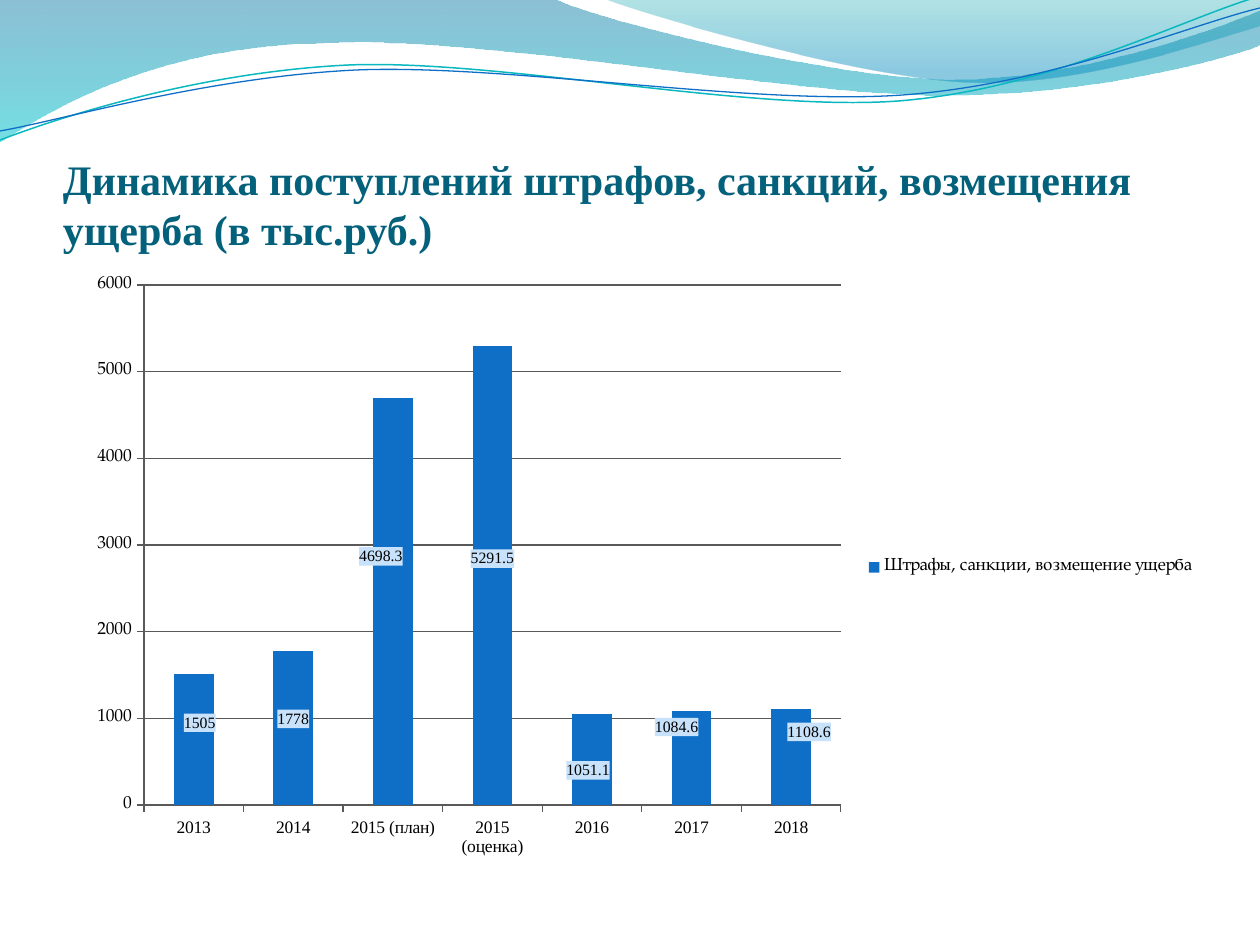
from copy import deepcopy
from typing import NamedTuple

from pptx import Presentation
from pptx.chart.data import CategoryChartData
from pptx.dml.color import RGBColor
from pptx.enum.chart import XL_CHART_TYPE as ChartType, XL_LEGEND_POSITION as LegendPosition
from pptx.enum.text import MSO_ANCHOR as Anchor
from pptx.oxml import parse_xml
from pptx.oxml.ns import nsdecls, qn
from pptx.util import Emu, Pt

PX = 914400 / 126
SERIF = "Times New Roman"
BODY = "TeX Gyre Pagella"
BLUE = "0F6FC6"
LABEL_FILL = "C7E2FA"
AXIS_GRAY = "595959"
CHART_BOX = (74, 265, 1134, 605)
PLOT_BOX = (70, 20, 697, 520)


class Stop(NamedTuple):
    position: float
    color: str
    opacity: int


class Wave(NamedTuple):
    start: tuple
    segments: list
    stops: tuple = ()
    color: str = ""
    width: float = 0


class Bar(NamedTuple):
    category: str
    value: float
    label_dx: int
    label_dy: int


WAVES = [
    Wave((0, 0), [
        [(554, -1)],
        [(600, 21), (837, 79), (955, 79)],
        [(1075, 79), (1207, 33), (1260, 11)],
        [(1261, 45)],
        [(1239, 55), (1096, 96), (940, 95)],
        [(784, 95), (481, 35), (324, 43)],
        [(163, 45), (58, 105), (-1, 142)],
    ], stops=(Stop(0, "0074A1", 45), Stop(1, "00C6CF", 55))),
    Wave((604, -1), [
        [(641, 14), (859, 78), (969, 82)],
        [(1079, 87), (1211, 40), (1260, 26)],
        [(1260, 0)],
    ], stops=(Stop(0, "00A1A9", 30), Stop(0.8, "008BBF", 45))),
    Wave((0, 140), [
        [(60, 117), (199, 72), (349, 65)],
        [(498, 59), (747, 112), (898, 101)],
        [(1050, 89), (1182, 19), (1257, -3)],
    ], color="0AB8BF", width=0.85),
    Wave((0, 131), [
        [(59, 121), (207, 77), (357, 70)],
        [(508, 64), (752, 106), (903, 95)],
        [(1053, 84), (1186, 26), (1260, 8)],
    ], color=BLUE, width=0.75),
]

BARS = [
    Bar("2013", 1505, 6, -17),
    Bar("2014", 1778, 0, -9),
    Bar("2015 (план)", 4698.3, -12, -45),
    Bar("2015 (оценка)", 5291.5, 0, -17),
    Bar("2016", 1051.1, -4, 11),
    Bar("2017", 1084.6, -15, -31),
    Bar("2018", 1108.6, 18, -25),
]


def px(length: float) -> Emu:
    return Emu(round(length * PX))


def rgb(color: str) -> RGBColor:
    return RGBColor.from_string(color)


def style_font(font, size: float, name: str, color: str = "000000", bold: bool = False) -> None:
    font.size, font.name, font.bold = Pt(size), name, bold
    font.color.rgb = rgb(color)


def bend(shape, segments: list) -> None:
    """Turn each three-point run of straight lines into one cubic curve."""
    lines = iter(list(shape._element.iter(qn("a:lnTo"))))
    for segment in segments:
        first, *others = [next(lines) for _ in segment]
        if not others:
            continue
        curve = parse_xml(f'<a:cubicBezTo {nsdecls("a")}/>')
        first.addprevious(curve)
        for line in (first, *others):
            curve.append(line[0])
            line.getparent().remove(line)


def draw_wave(slide, wave: Wave) -> None:
    points = [(px(x), px(y)) for segment in wave.segments for x, y in segment]
    builder = slide.shapes.build_freeform(*map(px, wave.start))
    builder.add_line_segments(points, close=bool(wave.stops))
    shape = builder.convert_to_shape()
    bend(shape, wave.segments)
    shape.shadow.inherit = False
    if not wave.stops:
        shape.fill.background()
        shape.line.color.rgb = rgb(wave.color)
        shape.line.width = Pt(wave.width)
        return
    shape.line.fill.background()
    shape.fill.gradient()
    shape.fill.gradient_angle = 270
    for target, stop in zip(shape.fill.gradient_stops, wave.stops):
        target.position = stop.position
        target.color.rgb = rgb(stop.color)
    for node, stop in zip(shape._element.spPr.iter(qn("a:srgbClr")), wave.stops):
        node.append(parse_xml(f'<a:alpha {nsdecls("a")} val="{stop.opacity * 1000}"/>'))


def draw_title(slide, text: str) -> None:
    box = slide.shapes.add_textbox(px(63), px(97), px(1134), px(157))
    frame = box.text_frame
    frame.word_wrap = True
    frame.vertical_anchor = Anchor.BOTTOM
    frame.margin_left = frame.margin_right = frame.margin_bottom = 0
    frame.text = text
    style_font(frame.paragraphs[0].runs[0].font, 24, SERIF, "04617B", True)


def manual_layout(x: int, y: int, size: tuple = ()):
    """Make a chart layout from px, as shares of the chart's size."""
    width, height = CHART_BOX[2:]
    parts = [("x", x / width), ("y", y / height)]
    modes = ""
    if size:
        parts += [("w", size[0] / width), ("h", size[1] / height)]
        modes = '<c:layoutTarget val="inner"/><c:xMode val="edge"/><c:yMode val="edge"/>'
    values = "".join(f'<c:{name} val="{share:.4f}"/>' for name, share in parts)
    return parse_xml(f'<c:layout {nsdecls("c")}><c:manualLayout>{modes}{values}'
                     '</c:manualLayout></c:layout>')


def place_labels(series) -> None:
    labels = series.data_labels
    labels.show_value = True
    style_font(labels.font, 9, SERIF)
    root = labels._element
    for leader in root.findall(qn("c:showLeaderLines")):
        leader.set("val", "0")
    text_style = root.find(qn("c:txPr"))
    fill = parse_xml(f'<c:spPr {nsdecls("c", "a")}><a:solidFill><a:srgbClr val="{LABEL_FILL}"/>'
                     '</a:solidFill></c:spPr>')
    text_style.addprevious(fill)
    flags = "".join(f'<c:show{name} val="{int(name == "Val")}"/>' for name in
                    ("LegendKey", "Val", "CatName", "SerName", "Percent", "BubbleSize"))
    for index, bar in enumerate(BARS):
        label = parse_xml(f'<c:dLbl {nsdecls("c")}><c:idx val="{index}"/>{flags}</c:dLbl>')
        parts = (manual_layout(bar.label_dx, bar.label_dy), deepcopy(fill), deepcopy(text_style))
        for offset, part in enumerate(parts, 1):
            label.insert(offset, part)
        root.insert(index, label)


def draw_chart(slide) -> None:
    data = CategoryChartData()
    data.categories = [bar.category for bar in BARS]
    data.add_series("Штрафы, санкции, возмещение ущерба", [bar.value for bar in BARS])
    chart = slide.shapes.add_chart(ChartType.COLUMN_STACKED, *map(px, CHART_BOX), data).chart
    style_font(chart.font, 10, BODY)
    chart.has_title = False
    chart.has_legend = True
    chart.legend.position = LegendPosition.RIGHT
    chart.legend.include_in_layout = False
    plot = chart.plots[0]
    plot.gap_width, plot.overlap, plot.vary_by_categories = 150, 100, False
    series = plot.series[0]
    series.format.fill.solid()
    series.format.fill.fore_color.rgb = rgb(BLUE)
    place_labels(series)
    values, categories = chart.value_axis, chart.category_axis
    values.minimum_scale, values.maximum_scale, values.major_unit = 0, 6000, 1000
    values.has_major_gridlines = True
    style_font(categories.tick_labels.font, 10, SERIF)
    for item in (values, categories, values.major_gridlines):
        item.format.line.color.rgb = rgb(AXIS_GRAY)
        item.format.line.width = Pt(0.75)
    area = chart._chartSpace.chart.plotArea
    for old in area.findall(qn("c:layout")):
        area.remove(old)
    area.insert(0, manual_layout(*PLOT_BOX[:2], PLOT_BOX[2:]))


def main() -> None:
    deck = Presentation()
    deck.slide_width, deck.slide_height = px(1260), px(945)
    page = deck.slides.add_slide(deck.slide_layouts[6])
    for wave in WAVES:
        draw_wave(page, wave)
    draw_title(page, "Динамика поступлений штрафов, санкций, возмещения ущерба (в тыс.руб.)")
    draw_chart(page)
    deck.save("out.pptx")


if __name__ == "__main__":
    main()
